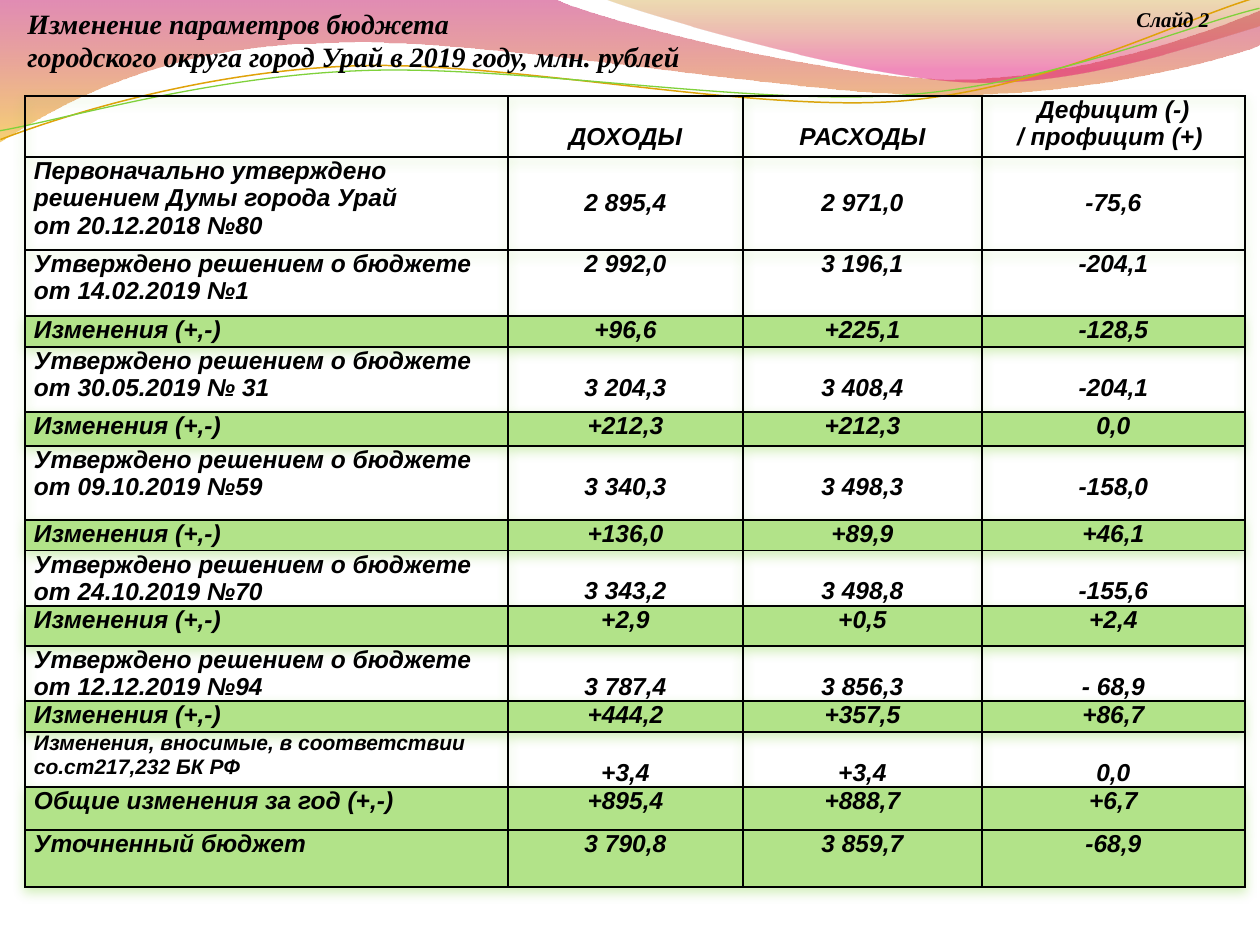
from pptx import Presentation
from pptx.dml.color import RGBColor as RGB
from pptx.enum.text import MSO_ANCHOR as ANCHOR, PP_ALIGN as ALIGN
from pptx.oxml import parse_xml
from pptx.oxml.ns import nsdecls
from pptx.util import Pt

PX = 914400 // 126
WIDTH, HEIGHT = 1260, 945

THEME = {
    "ink": "000000", "highlight": "B2E389", "glow": "7FD13B",
    "title_font": "Times New Roman", "table_font": "Arial",
    "title": 16, "page": 12, "cell": 14, "note": 12, "border": 1,
}

# Outlines: a pair is a straight step, six numbers are a Bezier step.
# Gradient stops: position, colour, opacity in percent.
BANDS = [
    ([(0, 0), (554, -1), (600, 21, 837, 79, 955, 79), (1075, 79, 1207, 33, 1260, 11),
      (1261, 45), (1239, 55, 1096, 96, 940, 95), (784, 95, 481, 35, 324, 43),
      (163, 45, 58, 105, -1, 142), (0, 0)],
     [(0, "BD0059", 45), (1, "F0AB00", 55)]),
    ([(604, -1), (641, 14, 859, 78, 969, 82), (1079, 87, 1211, 40, 1260, 26),
      (1260, 0), (604, -1)],
     [(0, "C38B00", 30), (0.8, "E1006B", 45)]),
]
WAVE_ROTATION = 357.3
WAVES = [
    ([(-2, 110), (58, 90, 199, 52, 350, 53), (499, 53, 745, 118, 896, 114),
      (1049, 109, 1184, 45, 1260, 27)], "E0A209", 0.85),
    ([(-2, 101), (57, 94, 207, 57, 357, 58), (509, 58, 750, 112, 902, 108),
      (1052, 104, 1188, 52, 1262, 38)], "7FD13B", 0.75),
]

HEADINGS = [
    # text, box, wrap, size
    ("Изменение параметров бюджета\nгородского округа город Урай в 2019 году, млн. рублей",
     (15, 0, 1171, 81), True, "title"),
    ("Слайд 2", (1124, 0, 99, 38), False, "page"),
]

TABLE_LEFT, TABLE_TOP = 25, 96
COLUMNS = [483, 235, 239, 263]
SIDE_MARGIN, LINE = 9, 27
CHANGES = "Изменения (+,-)"
APPROVED = "Утверждено решением о бюджете от "
# height, placement of the figures, label, income, spending, balance
ROWS = [
    (61, "second line", "", "ДОХОДЫ", "РАСХОДЫ", "Дефицит (-)\n/ профицит (+) "),
    (93, "middle", "Первоначально утверждено решением Думы города Урай\vот 20.12.2018 №80",
     "2 895,4", "2 971,0", "-75,6"),
    (66, "top", APPROVED + "14.02.2019 №1", "2 992,0", "3 196,1", "-204,1"),
    (31, "highlight", CHANGES, "+96,6", "+225,1", "-128,5"),
    (65, "second line", APPROVED + "30.05.2019 № 31", "3 204,3", "3 408,4", "-204,1"),
    (34, "highlight", CHANGES, "+212,3", "+212,3", "0,0"),
    (74, "second line", APPROVED + "09.10.2019 №59", "3 340,3", "3 498,3", "-158,0"),
    (31, "highlight", CHANGES, "+136,0", "+89,9", "+46,1"),
    (55, "second line", APPROVED + "24.10.2019 №70", "3 343,2", "3 498,8", "-155,6"),
    (40, "highlight", CHANGES, "+2,9", "+0,5", "+2,4"),
    (55, "second line", APPROVED + "12.12.2019 №94", "3 787,4", "3 856,3", "- 68,9"),
    (31, "highlight", CHANGES, "+444,2", "+357,5", "+86,7"),
    (55, "second line", "Изменения, вносимые, в соответствии со.ст217,232 БК РФ",
     "+3,4", "+3,4", "0,0"),
    (43, "highlight", "Общие изменения за год (+,-)", "+895,4", "+888,7", "+6,7"),
    (57, "highlight", "Уточненный бюджет", "3 790,8", "3 859,7", "-68,9"),
]
NOTE_ROW = 12


def add_outline(shapes, steps, close):
    """Draw the steps as straight segments, then join each Bezier step into one curve."""
    start, *rest = [(x * PX, y * PX) for step in steps for x, y in zip(step[::2], step[1::2])]
    builder = shapes.build_freeform(*start, scale=1.0)
    builder.add_line_segments(rest, close=close)
    outline = builder.convert_to_shape()
    outline.shadow.inherit = False
    segments = iter(outline._element.spPr.findall(".//{*}lnTo"))
    for step in steps[1:]:
        first = next(segments)
        if len(step) == 6:
            curve = parse_xml(f'<a:cubicBezTo {nsdecls("a")}/>')
            first.addprevious(curve)
            for segment in (first, next(segments), next(segments)):
                curve.append(segment[0])
                segment.getparent().remove(segment)
    return outline


def add_band(shapes, steps, stops):
    band = add_outline(shapes, steps, True)
    band.line.fill.background()
    band.fill.gradient()
    band.fill.gradient_angle = 270
    for stop, (position, colour, _) in zip(band.fill.gradient_stops, stops):
        stop.position = position
        stop.color.rgb = RGB.from_string(colour)
    colours = band._element.spPr.findall(".//{*}gs/{*}srgbClr")
    for colour, (_, _, opacity) in zip(colours, stops):
        colour.append(parse_xml(f'<a:alpha {nsdecls("a")} val="{opacity * 1000}"/>'))


def add_wave(shapes, steps, colour, width):
    wave = add_outline(shapes, steps, False)
    wave.rotation = WAVE_ROTATION
    wave.fill.background()
    wave.line.color.rgb = RGB.from_string(colour)
    wave.line.width = Pt(width)


def write(frame, text, font, size, align=ALIGN.LEFT):
    frame.text = text
    looks = {"name": THEME[font], "size": Pt(THEME[size]), "bold": True, "italic": True}
    for paragraph in frame.paragraphs:
        paragraph.alignment = align
        for run in paragraph.runs:
            for key, value in looks.items():
                setattr(run.font, key, value)
            run.font.color.rgb = RGB.from_string(THEME["ink"])


def add_borders(cell):
    for side in "LRTB":
        cell._tc.get_or_add_tcPr().append(parse_xml(
            f'<a:ln{side} {nsdecls("a")} w="{Pt(THEME["border"])}"><a:solidFill>'
            f'<a:srgbClr val="{THEME["ink"]}"/></a:solidFill></a:ln{side}>'))


def fill_cell(cell, text, placement, is_label, size):
    lowered = placement == "second line" and not is_label and "\n" not in text
    centred = placement == "middle" and not is_label
    layout = {
        "margin_left": SIDE_MARGIN * PX, "margin_right": SIDE_MARGIN * PX,
        "margin_top": LINE * PX if lowered else 0, "margin_bottom": 0,
        "vertical_anchor": ANCHOR.MIDDLE if centred else ANCHOR.TOP,
    }
    for key, value in layout.items():
        setattr(cell, key, value)
    write(cell.text_frame, text, "table_font", size, ALIGN.LEFT if is_label else ALIGN.CENTER)
    add_borders(cell)
    if placement == "highlight":
        cell.fill.solid()
        cell.fill.fore_color.rgb = RGB.from_string(THEME["highlight"])
    else:
        cell.fill.background()


def add_glow(table):
    """Give the table a soft shadow below."""
    table._tbl.tblPr.insert(0, parse_xml(
        f'<a:effectLst {nsdecls("a")}><a:outerShdw blurRad="{10 * PX}" dist="{5 * PX}" '
        f'dir="5400000" rotWithShape="0"><a:srgbClr val="{THEME["glow"]}">'
        '<a:alpha val="35000"/></a:srgbClr></a:outerShdw></a:effectLst>'))


def add_budget_table(shapes):
    box = (TABLE_LEFT, TABLE_TOP, sum(COLUMNS), sum(row[0] for row in ROWS))
    table = shapes.add_table(len(ROWS), len(COLUMNS), *(v * PX for v in box)).table
    table.first_row = table.horz_banding = False
    add_glow(table)
    for column, width in zip(table.columns, COLUMNS):
        column.width = width * PX
    for r, (height, placement, *texts) in enumerate(ROWS):
        table.rows[r].height = height * PX
        for c, text in enumerate(texts):
            size = "note" if (r, c) == (NOTE_ROW, 0) else "cell"
            fill_cell(table.cell(r, c), text, placement, c == 0, size)


def main():
    deck = Presentation()
    deck.slide_width, deck.slide_height = WIDTH * PX, HEIGHT * PX
    shapes = deck.slides.add_slide(deck.slide_layouts[6]).shapes
    for band in BANDS:
        add_band(shapes, *band)
    for wave in WAVES:
        add_wave(shapes, *wave)
    add_budget_table(shapes)
    for text, box, wrap, size in HEADINGS:
        frame = shapes.add_textbox(*(v * PX for v in box)).text_frame
        frame.word_wrap = wrap
        write(frame, text, "title_font", size)
    deck.save("out.pptx")


if __name__ == "__main__":
    main()
